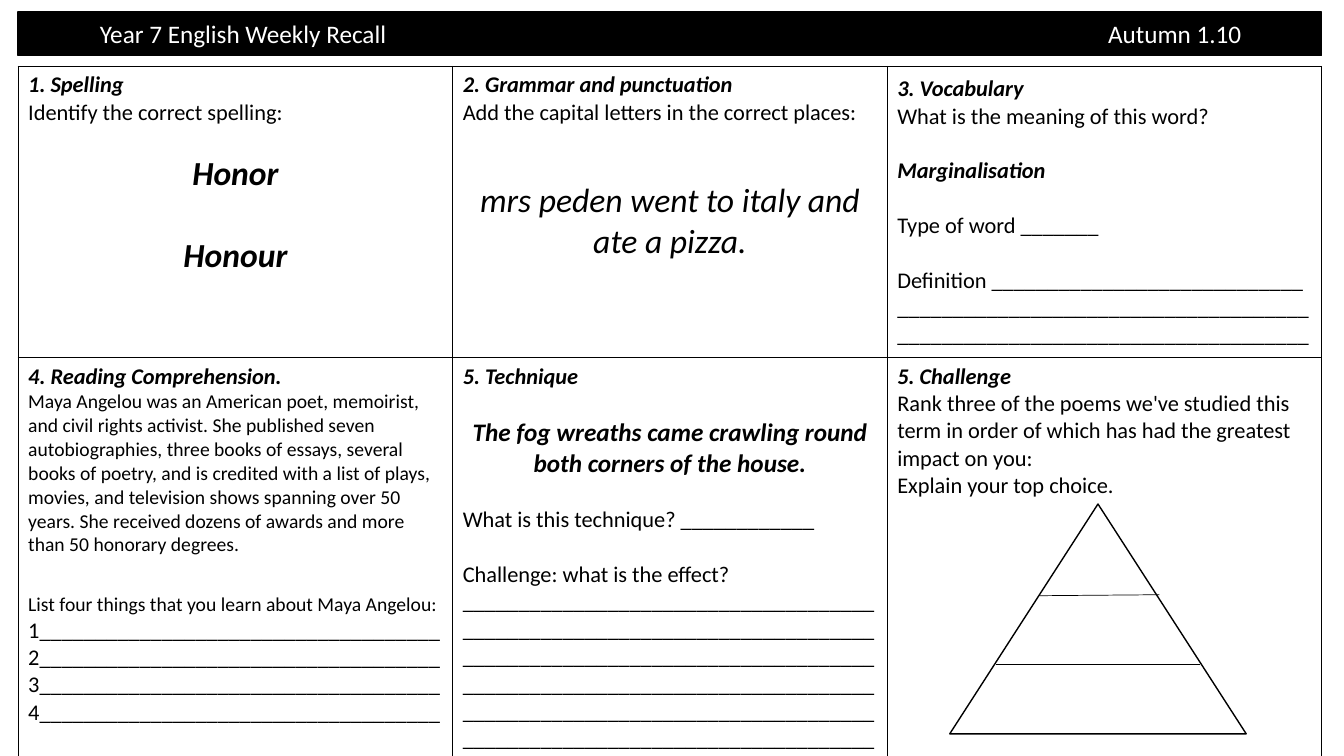
"""Build the Year 7 English weekly recall sheet: a title bar and a grid of six tasks."""
import pptx
import pptx.dml.color
import pptx.enum.shapes
import pptx.enum.text
import pptx.oxml
import pptx.oxml.ns
import pptx.util
from lxml import etree

Inches, Pt = pptx.util.Inches, pptx.util.Pt
BLACK = pptx.dml.color.RGBColor(0x00, 0x00, 0x00)
WHITE = pptx.dml.color.RGBColor(0xFF, 0xFF, 0xFF)
FONT = "Calibri"
LEFT = pptx.enum.text.PP_ALIGN.LEFT
CENTER = pptx.enum.text.PP_ALIGN.CENTER
TOP = pptx.enum.text.MSO_ANCHOR.TOP
MIDDLE = pptx.enum.text.MSO_ANCHOR.MIDDLE

MARGIN, COLUMN = 0.18, 4.31
GRID_TOP, ROWS = 0.66, (2.89, 3.73)
LINE_HEIGHT = 1.22
RULE = "_" * 37
NUMBERED_RULES = "".join(f"{number}{'_' * 36}" for number in range(1, 5))


def write_run(paragraph, text, size, color, style=""):
    """Add one run; style holds b for bold and i for italic."""
    run = paragraph.add_run()
    run.text = text
    run.font.name, run.font.size = FONT, Pt(size)
    run.font.bold, run.font.italic = "b" in style, "i" in style
    run.font.color.rgb = color


def add_child(parent, tag, **attributes):
    """Append a DrawingML element and return it."""
    return etree.SubElement(parent, pptx.oxml.ns.qn(tag), attributes)


deck = pptx.Presentation()
deck.slide_width, deck.slide_height = Inches(13.33), Inches(7.5)
slide = deck.slides.add_slide(deck.slide_layouts[5])

heading = slide.shapes.title
heading.left, heading.top = Inches(MARGIN), Inches(0.12)
heading.width, heading.height = Inches(3 * COLUMN), Inches(0.43)
heading.fill.solid()
heading.fill.fore_color.rgb = BLACK
heading.line.color.rgb = BLACK
heading.line.width = Pt(1)
heading.text_frame.vertical_anchor = MIDDLE
heading.text_frame.margin_left = Inches(0.81)
heading.text_frame.margin_top = heading.text_frame.margin_bottom = 0
heading_line = heading.text_frame.paragraphs[0]
heading_line.alignment = LEFT
write_run(heading_line, "Year 7 English Weekly Recall\tAutumn 1.10", 18, WHITE)
tab_stops = add_child(heading_line._p.get_or_add_pPr(), "a:tabLst")
add_child(tab_stops, "a:tab", pos=str(Inches(10)), algn="l")

# Each line: text, size, style, alignment, height in points of the gap above, line spacing
tasks = [
    [
        [
            ("1. Spelling", 16, "bi", LEFT, 0, 1),
            ("Identify the correct spelling:", 16, "", LEFT, 0, 1),
            ("Honor", 24, "bi", CENTER, 16, 1),
            ("Honour", 24, "bi", CENTER, 24, 1),
        ],
        [
            ("2. Grammar and punctuation", 16, "bi", LEFT, 0, 1),
            ("Add the capital letters in the correct places:", 16, "", LEFT, 0, 1),
            ("mrs peden went to italy and ate a pizza.", 24, "i", CENTER, 32, 1),
        ],
        [
            ("3. Vocabulary", 16, "bi", LEFT, 0, 1),
            ("What is the meaning of this word?", 16, "", LEFT, 0, 1),
            ("Marginalisation", 16, "bi", LEFT, 16, 1),
            ("Type of word _______", 16, "", LEFT, 16, 1),
            (f"Definition {'_' * 28} {RULE * 2}", 16, "", LEFT, 16, 1),
        ],
    ],
    [
        [
            ("4. Reading Comprehension.", 16, "bi", LEFT, 0, 1),
            ("Maya Angelou was an American poet, memoirist, and civil rights activist. "
             "She published seven autobiographies, three books of essays, several books of "
             "poetry, and is credited with a list of plays, movies, and television shows "
             "spanning over 50 years. She received dozens of awards and more than 50 "
             "honorary degrees.", 14, "", LEFT, 0, 1),
            ("List four things that you learn about Maya Angelou:", 14, "", LEFT, 14, 1.5),
            (NUMBERED_RULES, 16, "", LEFT, 0, 1),
        ],
        [
            ("5. Technique", 16, "bi", LEFT, 0, 1),
            ("The fog wreaths came crawling round both corners of the house.",
             18, "bi", CENTER, 16, 1),
            ("What is this technique? ____________", 16, "", LEFT, 16, 1),
            (f"Challenge: what is the effect? {RULE * 6}", 16, "", LEFT, 16, 1),
        ],
        [
            ("5. Challenge", 16, "bi", LEFT, 0, 1),
            ("Rank three of the poems we've studied this term in order of which has had "
             "the greatest impact on you:", 16, "", LEFT, 0, 1),
            ("Explain your top choice.", 16, "", LEFT, 0, 1),
        ],
    ],
]

grid = slide.shapes.add_table(2, 3, Inches(MARGIN), Inches(GRID_TOP),
                              Inches(3 * COLUMN), Inches(sum(ROWS))).table
grid.first_row = grid.horz_banding = False
for column in grid.columns:
    column.width = Inches(COLUMN)
for row, height in zip(grid.rows, ROWS):
    row.height = Inches(height)

for row_index, row_tasks in enumerate(tasks):
    for column_index, task in enumerate(row_tasks):
        cell = grid.cell(row_index, column_index)
        cell.vertical_anchor = MIDDLE if (row_index, column_index) == (0, 2) else TOP
        for index, (text, size, style, alignment, gap, spacing) in enumerate(task):
            paragraph = (cell.text_frame.add_paragraph() if index
                         else cell.text_frame.paragraphs[0])
            paragraph.alignment = alignment
            paragraph.line_spacing = float(spacing)
            paragraph.space_before = Pt(gap * LINE_HEIGHT)
            write_run(paragraph, text, size, BLACK, style)
        cell_properties = cell._tc.get_or_add_tcPr()
        for side in ("a:lnL", "a:lnR", "a:lnT", "a:lnB"):
            border = add_child(cell_properties, side, w=str(Pt(1)))
            border_fill = add_child(border, "a:solidFill")
            add_child(border_fill, "a:srgbClr", val=str(BLACK))
        cell.fill.solid()
        cell.fill.fore_color.rgb = WHITE

pyramid = slide.shapes.add_shape(pptx.enum.shapes.MSO_SHAPE.ISOSCELES_TRIANGLE,
                                 Inches(9.42), Inches(5), Inches(2.94), Inches(2.28))
pyramid.shadow.inherit = False
pyramid.fill.solid()
pyramid.fill.fore_color.rgb = WHITE
pyramid.line.color.rgb = BLACK
pyramid.line.width = Pt(1)

for start_x, start_y, end_x, end_y in ((10.31, 5.91, 11.5, 5.9), (9.88, 6.59, 11.9, 6.59)):
    tier = slide.shapes.add_connector(pptx.enum.shapes.MSO_CONNECTOR.STRAIGHT,
                                      Inches(start_x), Inches(start_y),
                                      Inches(end_x), Inches(end_y))
    tier.line.color.rgb = BLACK
    tier.line.width = Pt(0.5)
    add_child(tier._element.spPr, "a:effectLst")

deck.save("out.pptx")
